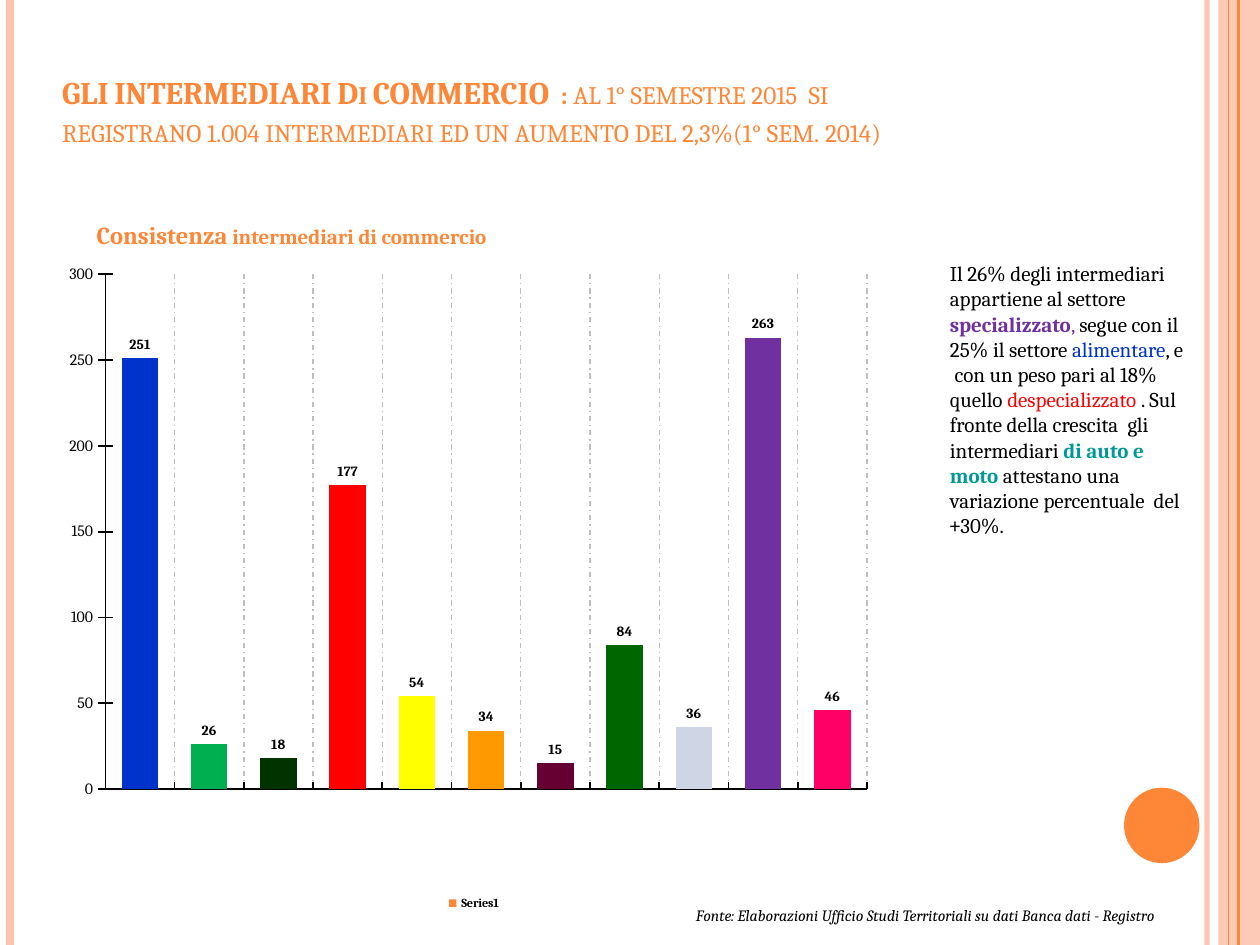
from lxml import etree
from pptx import Presentation
from pptx import util as u
from pptx.chart.data import CategoryChartData
from pptx.dml.color import RGBColor
from pptx.enum import chart as charts, dml, shapes, text
from pptx.oxml import parse_xml
from pptx.oxml.ns import nsdecls, qn

ORANGE, PEACH, BLACK, VIOLET = "FE8637", "FEC3AE", "000000", "7030A0"
rgb = RGBColor.from_string


def add_run(paragraph, words, size, color=BLACK, bold=False, italic=False, font="Cambria"):
    run = paragraph.add_run()
    run.text = words
    run.font.name, run.font.size = font, u.Pt(size)
    run.font.bold, run.font.italic = bold, italic
    run.font.color.rgb = rgb(color)
    return run


def set_opacity(shape, percent):
    for color in shape._element.spPr.iter(qn("a:srgbClr")):
        etree.SubElement(color, qn("a:alpha")).set("val", str(percent * 1000))


presentation = Presentation()
presentation.slide_width, presentation.slide_height = u.Cm(25.4), u.Cm(19.05)
slide = presentation.slides.add_slide(presentation.slide_layouts[5])

# Side decoration
band = slide.shapes.add_shape(shapes.MSO_SHAPE.RECTANGLE, u.Cm(24.56), 0, u.Cm(0.84), u.Cm(19.05))
circle = slide.shapes.add_shape(shapes.MSO_SHAPE.OVAL, u.Cm(22.66), u.Cm(15.88), u.Cm(1.52), u.Cm(1.52))
for shape, color in ((band, PEACH), (circle, ORANGE)):
    shape.shadow.inherit = False
    shape.fill.solid()
    shape.fill.fore_color.rgb = rgb(color)
    shape.line.fill.background()
set_opacity(band, 87)

for x, color, width, opacity in (
    (24.33, PEACH, 3, 93),
    (0.2, PEACH, 4.5, 100),
    (24.97, ORANGE, 1.5, 100),
    (24.77, ORANGE, 0.75, 100),
):
    line = slide.shapes.add_connector(shapes.MSO_CONNECTOR.STRAIGHT, u.Cm(x), 0, u.Cm(x), u.Cm(19.05))
    line.line.color.rgb = rgb(color)
    line.line.width = u.Pt(width)
    etree.SubElement(line._element.spPr, qn("a:effectLst"))
    if opacity < 100:
        set_opacity(line, opacity)

# Title in small capitals
title = slide.shapes.title
title.left, title.top, title.width, title.height = u.Cm(0.89), u.Cm(1.32), u.Cm(22.4), u.Cm(1.8)
frame = title.text_frame
frame.word_wrap = True
frame.auto_size = text.MSO_AUTO_SIZE.NONE
frame.vertical_anchor = text.MSO_ANCHOR.BOTTOM
frame.margin_left = u.Cm(0.36)
paragraph = frame.paragraphs[0]
paragraph.alignment = text.PP_ALIGN.LEFT
add_run(paragraph, "GLI INTERMEDIARI Di COMMERCIO  : ", 18, ORANGE, bold=True)
add_run(paragraph, "al 1° semestre 2015  si", 18, ORANGE)
paragraph.add_line_break()
add_run(paragraph, "registrano 1.004 intermediari ed un aumento del 2,3%(1° sem. 2014)", 18, ORANGE)
for run in paragraph.runs:
    run._r.get_or_add_rPr().set("cap", "small")

# Column chart: one colour for each sector
bars = (
    (251, "0033CC"), (26, "00B050"), (18, "003300"), (177, "FF0000"),
    (54, "FFFF00"), (34, "FF9900"), (15, "660033"), (84, "006600"),
    (36, "CED6E6"), (263, VIOLET), (46, "FF0066"),
)
data = CategoryChartData(number_format="#,##0")
data.categories = [str(number) for number in range(1, len(bars) + 1)]
data.add_series("Series1", [value for value, color in bars])
chart = slide.shapes.add_chart(
    charts.XL_CHART_TYPE.COLUMN_CLUSTERED, u.Cm(1.3), u.Cm(5.13), u.Cm(16.51), u.Cm(13.31), data
).chart
chart.has_title = False
chart.font.name, chart.font.size = "Cambria", u.Pt(10)
chart.font.color.rgb = rgb(BLACK)
chart.has_legend = True
chart.legend.position = charts.XL_LEGEND_POSITION.BOTTOM
chart.legend.include_in_layout = False
chart.legend.font.size, chart.legend.font.bold = u.Pt(7), True

for axis in (chart.category_axis, chart.value_axis):
    axis.tick_labels.font.size = u.Pt(9)
    axis.format.line.color.rgb = rgb(BLACK)
    axis.format.line.width = u.Pt(1)
    axis.minor_tick_mark = charts.XL_TICK_MARK.NONE
chart.category_axis.tick_label_position = charts.XL_TICK_LABEL_POSITION.NONE
chart.category_axis.major_tick_mark = charts.XL_TICK_MARK.INSIDE
chart.category_axis.has_major_gridlines = True
grid = chart.category_axis.major_gridlines.format.line
grid.color.rgb = rgb("BFBFBF")
grid.width = u.Pt(0.75)
grid.dash_style = dml.MSO_LINE.DASH_DOT
value_axis = chart.value_axis
value_axis.has_major_gridlines = False
value_axis.major_tick_mark = charts.XL_TICK_MARK.CROSS
value_axis.minimum_scale, value_axis.maximum_scale, value_axis.major_unit = 0, 300, 50
value_axis.tick_labels.number_format = "#,##0"
value_axis.tick_labels.number_format_is_linked = False

plot = chart.plots[0]
plot.gap_width = 90
plot.vary_by_categories = False
series = plot.series[0]
series.format.fill.solid()
series.format.fill.fore_color.rgb = rgb(ORANGE)
for index, (value, color) in enumerate(bars):
    fill = series.points[index].format.fill
    fill.solid()
    fill.fore_color.rgb = rgb(color)
labels = series.data_labels
labels.show_value = True
labels.position = charts.XL_LABEL_POSITION.OUTSIDE_END
labels.number_format, labels.number_format_is_linked = "#,##0", False
labels.font.size, labels.font.bold = u.Pt(8), True

plot_area = chart._chartSpace.chart.plotArea
for layout in plot_area.findall(qn("c:layout")):
    plot_area.remove(layout)
plot_area.insert(0, parse_xml(
    f'<c:layout {nsdecls("c")}><c:manualLayout><c:layoutTarget val="inner"/>'
    '<c:xMode val="edge"/><c:yMode val="edge"/><c:x val="0.05"/><c:y val="0.03"/>'
    '<c:w val="0.93"/><c:h val="0.78"/></c:manualLayout></c:layout>'
))

# Commentary, chart heading and source: (place, alignment, runs)
LEFT, RIGHT = text.PP_ALIGN.LEFT, text.PP_ALIGN.RIGHT
text_boxes = (
    ((18.9, 5.13, 5.21, 6.93), LEFT, (
        ("Il 26% degli intermediari appartiene al settore ", 12),
        ("specializzato", 12, VIOLET, True),
        (", ", 12, VIOLET),
        ("segue con il 25% il settore ", 12),
        ("alimentare", 12, "0033CC"),
        (", e  con un peso pari al 18% quello ", 12),
        ("despecializzato", 12, "FF0000"),
        (" . Sul fronte della crescita  gli intermediari ", 12),
        ("di auto e moto ", 12, "009A96", True),
        ("attestano una variazione percentuale  del ", 12),
        ("+", 12, BLACK, False, False, "Calibri"),
        ("30%.", 12),
    )),
    ((1.7, 4.32, 11.99, 0.86), LEFT, (
        ("Consistenza", 14, ORANGE, True),
        (" intermediari di commercio", 12, ORANGE, True),
    )),
    ((0.71, 18.14, 22.81, 0.64), RIGHT, (
        ("Fonte: Elaborazioni Ufficio Studi Territoriali su dati Banca dati - Registro", 9, BLACK, False, True),
    )),
)
for place, alignment, runs in text_boxes:
    frame = slide.shapes.add_textbox(*map(u.Cm, place)).text_frame
    frame.word_wrap = True
    paragraph = frame.paragraphs[0]
    paragraph.alignment = alignment
    for run in runs:
        add_run(paragraph, *run)

presentation.save("out.pptx")
